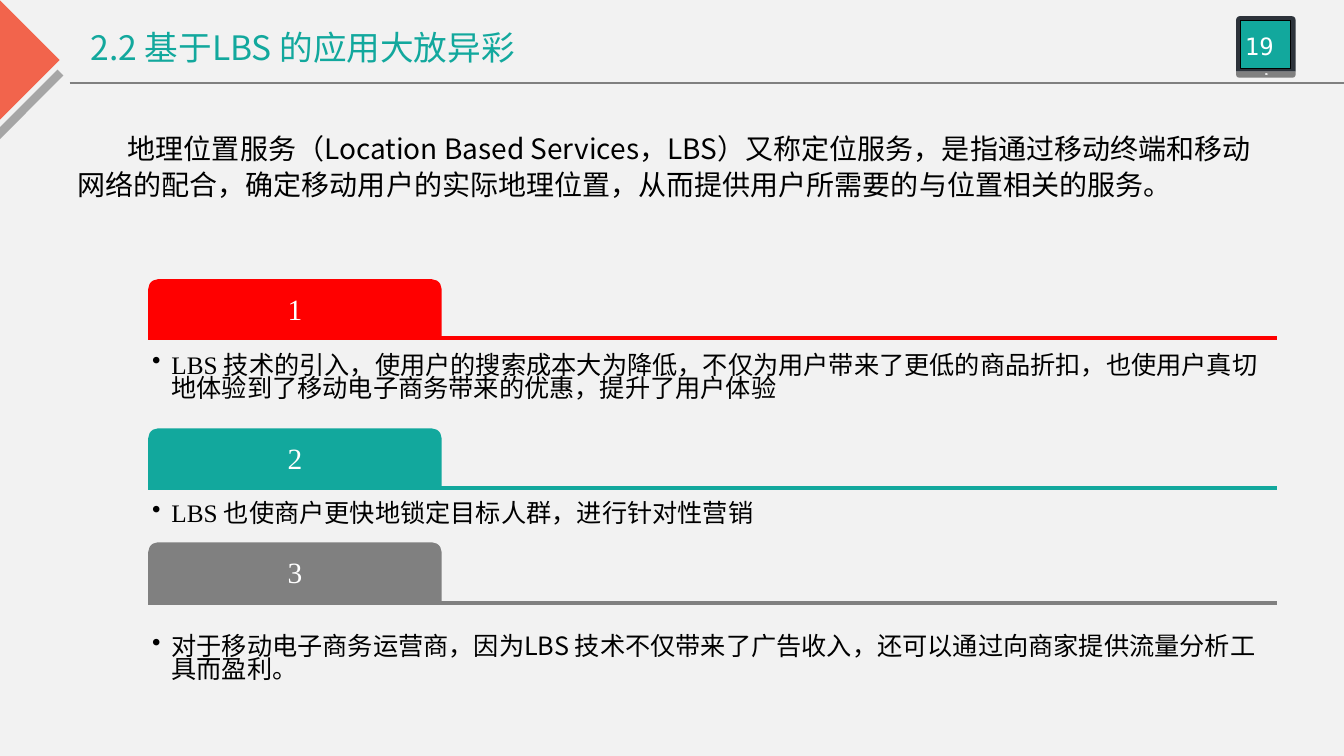
from lxml.etree import SubElement
from pptx import Presentation
from pptx.dml.color import RGBColor
from pptx.enum.shapes import MSO_CONNECTOR as Line, MSO_SHAPE as Kind
from pptx.enum.text import MSO_ANCHOR as Anchor, PP_ALIGN as Align
from pptx.oxml.ns import qn
from pptx.util import Inches, Pt

TEAL = RGBColor(0x12, 0xA8, 0x9D)
RED = RGBColor(0xFF, 0x00, 0x00)
GRAY = RGBColor(0x80, 0x80, 0x80)
SILVER = RGBColor(0xA6, 0xA6, 0xA6)
CORAL = RGBColor(0xF2, 0x64, 0x4C)
NAVY = RGBColor(0x2D, 0x33, 0x3B)
PALE = RGBColor(0xF2, 0xF2, 0xF2)
BLACK = RGBColor(0, 0, 0)
WHITE = RGBColor(0xFF, 0xFF, 0xFF)
SANS, SERIF, MONO = "Noto Sans CJK SC", "Times New Roman", "DejaVu Sans Mono"

TITLE = "2.2 基于LBS 的应用大放异彩"
PAGE = "19"
INTRO = ("地理位置服务（Location Based Services，LBS）又称定位服务，是指通过移动终端和"
         "移动网络的配合，确定移动用户的实际地理位置，从而提供用户所需要的与位置相关的服务。")
POINTS = [
    (RED, 2.77, 3.35, 3.49, SERIF,
     "LBS 技术的引入，使用户的搜索成本大为降低，不仅为用户带来了更低的商品折扣，"
     "也使用户真切地体验到了移动电子商务带来的优惠，提升了用户体验"),
    (TEAL, 4.25, 4.84, 4.96, SERIF,
     "LBS 也使商户更快地锁定目标人群，进行针对性营销"),
    (GRAY, 5.38, 5.98, 6.28, SANS,
     "对于移动电子商务运营商，因为LBS 技术不仅带来了广告收入，"
     "还可以通过向商家提供流量分析工具而盈利。"),
]
LEFT, RIGHT = 1.47, 12.67
TAB = (2.91, 0.58)


def write(frame, text, size, font, color, align=Align.LEFT, space=None,
          anchor=Anchor.TOP, pads=(0.1, 0.05, 0.1, 0.05)):
    """Put one styled run in a text frame and return its paragraph."""
    frame.word_wrap = True
    frame.vertical_anchor = anchor
    (frame.margin_left, frame.margin_top,
     frame.margin_right, frame.margin_bottom) = map(Inches, pads)
    para = frame.paragraphs[0]
    para.alignment = align
    para.line_spacing = space
    run = para.add_run()
    run.text = text
    run.font.size = Pt(size)
    run.font.name = font
    run.font.color.rgb = color
    SubElement(run.font._element, qn("a:ea")).set("typeface", SANS)
    return para


def indent(para, margin, first):
    """Set the left margin and first line indent."""
    props = para._p.get_or_add_pPr()
    props.set("marL", str(Inches(margin)))
    props.set("indent", str(Inches(first)))
    return props


def block(slide, kind, box, fill, edge=None, turn=0, adjust=None):
    """Add a flat preset shape."""
    shape = slide.shapes.add_shape(kind, *map(Inches, box))
    shape.shadow.inherit = False
    shape.fill.solid()
    shape.fill.fore_color.rgb = fill
    if edge is None:
        shape.line.fill.background()
    else:
        shape.line.color.rgb = edge
        shape.line.width = Pt(0.75)
    shape.rotation = turn
    if adjust is not None:
        shape.adjustments[0] = adjust
    return shape


def rule(slide, ends, color, width):
    """Add a straight line."""
    line = slide.shapes.add_connector(Line.STRAIGHT, *map(Inches, ends))
    line.line.color.rgb = color
    line.line.width = Pt(width)
    SubElement(line._element.spPr, qn("a:effectLst"))


def label(slide, box):
    """Add a text box and return its frame."""
    return slide.shapes.add_textbox(*map(Inches, box)).text_frame


def frame(slide):
    """Draw the corner, the header line and the page tablet."""
    block(slide, Kind.RIGHT_TRIANGLE, (-0.46, 0.16, 0.87, 0.87), CORAL, turn=225)
    rule(slide, (-0.11, 1.43, 0.6, 0.72), SILVER, 6)
    rule(slide, (0.69, 0.82, 13.33, 0.82), GRAY, 1.5)
    cap = Kind.ROUND_2_SAME_RECTANGLE
    block(slide, cap, (12.26, 0.16, 0.59, 0.55), NAVY, adjust=0.07)
    block(slide, cap, (12.26, 0.71, 0.59, 0.06), GRAY, turn=180, adjust=0.5)
    block(slide, Kind.OVAL, (12.54, 0.72, 0.04, 0.03), PALE, GRAY)
    block(slide, Kind.RECTANGLE, (12.3, 0.2, 0.5, 0.48), TEAL, BLACK)
    write(label(slide, (12.17, 0.27, 0.64, 0.38)), PAGE, 17, MONO, WHITE,
          Align.CENTER, anchor=Anchor.MIDDLE)


def head(slide):
    """Fill the title and the opening paragraph."""
    title = slide.shapes.title
    title.left, title.top, title.width, title.height = map(
        Inches, (0.8, 0.27, 10.01, 0.48))
    write(title.text_frame, TITLE, 24, SANS, TEAL, space=0.75,
          anchor=Anchor.MIDDLE)
    intro = write(label(slide, (0.67, 1.23, 12, 1.44)), INTRO, 20, SANS, BLACK,
                  space=1.08)
    indent(intro, 0, 0.5)


def points(slide):
    """Draw the numbered tabs with their lines and bullets."""
    for num, (color, top, base, below, font, text) in enumerate(POINTS, 1):
        rule(slide, (LEFT, base, RIGHT, base), color, 3)
        tab = block(slide, Kind.ROUND_2_SAME_RECTANGLE, (LEFT, top, *TAB), color)
        write(tab.text_frame, str(num), 21, SERIF, WHITE, Align.CENTER, 0.9,
              Anchor.MIDDLE, (0.06, 0.06, 0.06, 0.04))
        para = write(label(slide, (LEFT, below, RIGHT - LEFT, 0.83)), text, 18,
                     font, BLACK, space=0.77, pads=(0.04,) * 4)
        props = indent(para, 0.19, -0.19)
        SubElement(props, qn("a:buChar")).set("char", "•")


def main():
    """Build and save the slide."""
    deck = Presentation()
    deck.slide_width, deck.slide_height = Inches(13.33), Inches(7.5)
    slide = deck.slides.add_slide(deck.slide_layouts[5])
    slide.background.fill.solid()
    slide.background.fill.fore_color.rgb = PALE
    frame(slide)
    head(slide)
    points(slide)
    deck.save("out.pptx")


if __name__ == "__main__":
    main()
